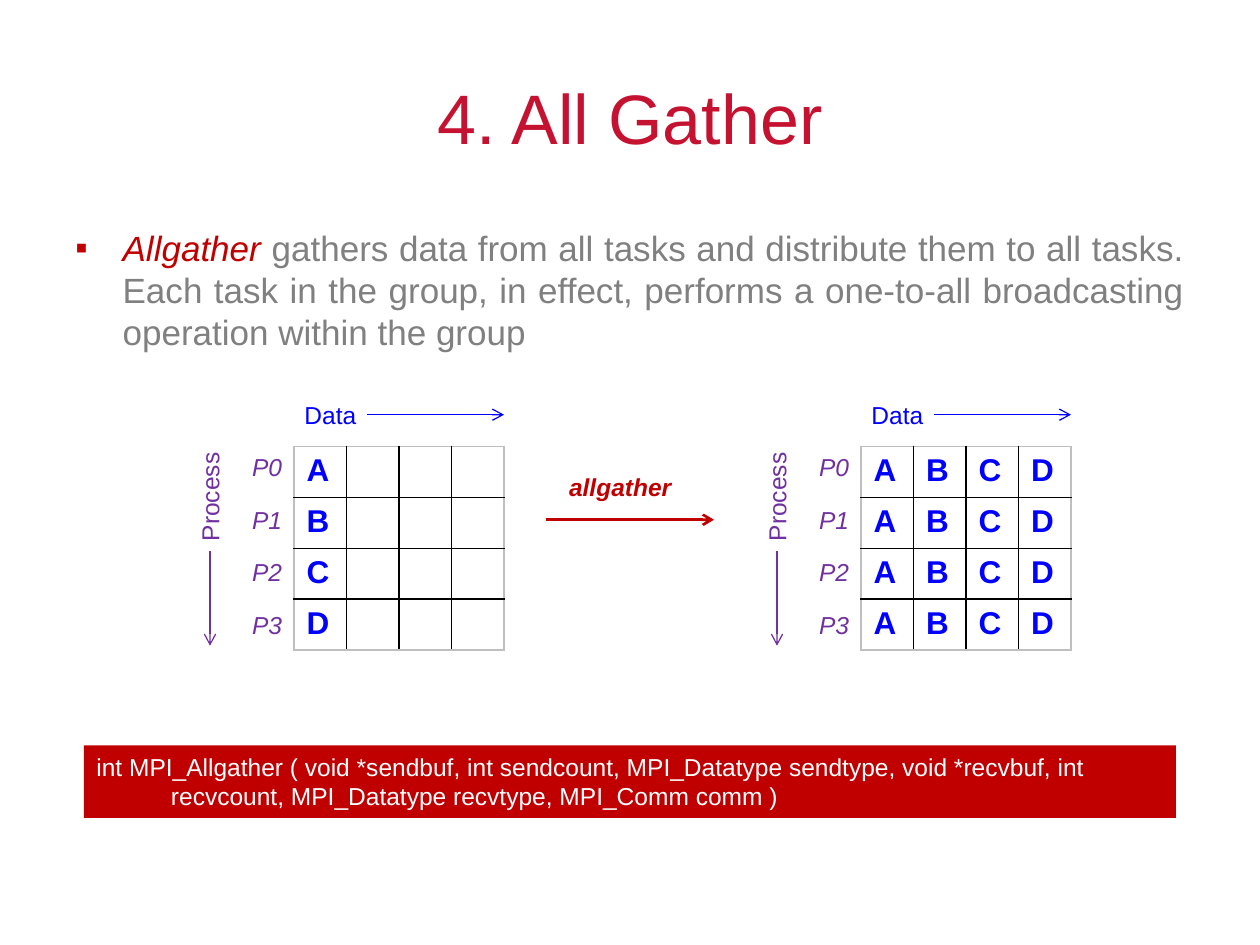
import pptx
import pptx.dml.color
import pptx.enum.shapes
import pptx.enum.text
import pptx.oxml
import pptx.oxml.ns
import pptx.util
from lxml import etree

RED, BLUE, PURPLE = "C00000", "0000FF", "7030A0"
TITLE_RED, GREY, EDGE = "C41230", "808080", "BFBFBF"
SIDE = 4  # processes, and data items per process
ALIGN = pptx.enum.text.PP_ALIGN
ANCHOR = pptx.enum.text.MSO_ANCHOR


def grid(units):
    """Layout grid: twelve units to the inch."""
    return pptx.util.Emu(round(units * 914400 / 12))


def colour(value):
    return pptx.dml.color.RGBColor.from_string(value)


def set_font(font, size, value, bold=False, italic=False):
    font.name, font.size = "Arial", pptx.util.Pt(size)
    font.color.rgb = colour(value)
    font.bold, font.italic = bold, italic


def set_indent(paragraph, hang):
    properties = paragraph._p.get_or_add_pPr()
    properties.set("marL", str(grid(hang)))
    properties.set("indent", str(-grid(hang)))
    return properties


def add_label(slide, box, text, value, **style):
    label = slide.shapes.add_textbox(*map(grid, box))
    frame = label.text_frame
    frame.word_wrap = False
    frame.margin_left = frame.margin_right = 0
    frame.text = text
    set_font(frame.paragraphs[0].font, 14, value, **style)
    return label


def add_arrow(slide, start, end, value, width=0.75):
    arrow = slide.shapes.add_connector(
        pptx.enum.shapes.MSO_CONNECTOR.STRAIGHT, *map(grid, start + end))
    arrow.line.color.rgb = colour(value)
    arrow.line.width = pptx.util.Pt(width)
    etree.SubElement(arrow.line._get_or_add_ln(),
                     pptx.oxml.ns.qn("a:tailEnd"), type="arrow")
    etree.SubElement(arrow._element.spPr, pptx.oxml.ns.qn("a:effectLst"))


def set_borders(cell, row, column):
    """Grey round the outside of the matrix, black inside."""
    outer = {"lnL": column == 0, "lnR": column == SIDE - 1,
             "lnT": row == 0, "lnB": row == SIDE - 1}
    properties = cell._tc.get_or_add_tcPr()
    for position, (tag, is_outer) in enumerate(outer.items()):
        properties.insert(position, pptx.oxml.parse_xml(
            f'<a:{tag} {pptx.oxml.ns.nsdecls("a")} w="12700"><a:solidFill>'
            f'<a:srgbClr val="{EDGE if is_outer else "000000"}"/>'
            f'</a:solidFill></a:{tag}>'))


def add_matrix(slide, box, rows):
    table = slide.shapes.add_table(SIDE, SIDE, *map(grid, box)).table
    table.first_row = table.horz_banding = False
    for r, letters in enumerate(rows):
        for c, letter in enumerate(letters):
            cell = table.cell(r, c)
            cell.text = letter
            cell.fill.background()
            set_font(cell.text_frame.paragraphs[0].font, 18, BLUE, bold=True)
            set_borders(cell, r, c)


def add_diagram(slide, box, rows):
    """Matrix with a data axis above it and a process axis on its left."""
    left, top, width, height = box
    matrix_left, matrix_top = left + 8, top + 5
    add_matrix(slide, (matrix_left, matrix_top, width - 8, height - 5), rows)

    # Process names, one per row
    for process in range(SIDE):
        add_label(slide, (left + 4, matrix_top + 5 * process, 3, 4),
                  f"P{process}", PURPLE, italic=True)

    # Data axis
    add_label(slide, (left + 9, top, 5, 4), "Data", BLUE)
    add_arrow(slide, (left + 15, top + 2), (left + width, top + 2), BLUE)

    # Process axis
    axis = add_label(slide, (left - 4.3, top + 7.8, 8.5, 4), "Process", PURPLE)
    axis.rotation = 270
    axis.text_frame.vertical_anchor = ANCHOR.BOTTOM
    add_arrow(slide, (left, top + 15), (left, top + 24), PURPLE)


def add_title(slide, box, text):
    title = slide.shapes.title
    title.left, title.top, title.width, title.height = map(grid, box)
    title.text_frame.text = text
    title.text_frame.vertical_anchor = ANCHOR.MIDDLE
    paragraph = title.text_frame.paragraphs[0]
    paragraph.alignment = ALIGN.CENTER
    set_font(paragraph.font, 40, TITLE_RED)


def add_definition(slide, box, term, explanation):
    frame = slide.shapes.add_textbox(*map(grid, box)).text_frame
    frame.word_wrap = True
    paragraph = frame.paragraphs[0]
    paragraph.alignment = ALIGN.JUSTIFY
    properties = set_indent(paragraph, 4.5)
    bullet_colour = etree.SubElement(properties, pptx.oxml.ns.qn("a:buClr"))
    etree.SubElement(bullet_colour, pptx.oxml.ns.qn("a:srgbClr"), val=RED)
    etree.SubElement(properties, pptx.oxml.ns.qn("a:buFont"), typeface="Arial")
    etree.SubElement(properties, pptx.oxml.ns.qn("a:buChar"), char="▪")
    for text, value, italic in ((term, RED, True), (explanation, GREY, False)):
        run = paragraph.add_run()
        run.text = text
        set_font(run.font, 20, value, italic=italic)


def add_operation(slide, box, name):
    left, top, width, height = box
    add_label(slide, (left + 2.2, top, 9.8, 4), name, RED,
              bold=True, italic=True)
    add_arrow(slide, (left, top + height), (left + width, top + height),
              RED, 1.5)


def add_signature(slide, box, code):
    band = slide.shapes.add_shape(
        pptx.enum.shapes.MSO_SHAPE.RECTANGLE, *map(grid, box))
    band.shadow.inherit = False
    band.fill.solid()
    band.fill.fore_color.rgb = colour(RED)
    band.line.fill.background()
    frame = band.text_frame
    frame.word_wrap = True
    frame.vertical_anchor = ANCHOR.TOP
    frame.text = code
    paragraph = frame.paragraphs[0]
    paragraph.alignment = ALIGN.LEFT
    set_indent(paragraph, 7.1)
    set_font(paragraph.font, 14, "FFFFFF")


def main():
    deck = pptx.Presentation()
    deck.slide_width, deck.slide_height = grid(120), grid(90)
    slide = deck.slides.add_slide(deck.slide_layouts[5])

    add_title(slide, (6, 3.6, 108, 15), "4. All Gather")
    add_definition(
        slide, (6, 21, 108, 59.4), "Allgather ",
        "gathers data from all tasks and distribute them to all tasks. "
        "Each task in the group, in effect, performs a one-to-all "
        "broadcasting operation within the group")

    # Before and after the operation
    letters = "ABCD"
    before = [[letter] + [""] * (SIDE - 1) for letter in letters]
    after = [letters] * SIDE
    for left, rows in ((20, before), (74, after)):
        add_diagram(slide, (left, 37.5, 28, 24.44), rows)
    add_operation(slide, (52, 44.4, 16, 5.1), "allgather")

    add_signature(
        slide, (8, 71, 104, 6.9),
        "int MPI_Allgather ( void *sendbuf, int sendcount, MPI_Datatype "
        "sendtype, void *recvbuf, int recvcount, MPI_Datatype recvtype, "
        "MPI_Comm comm )")
    deck.save("out.pptx")


if __name__ == "__main__":
    main()
